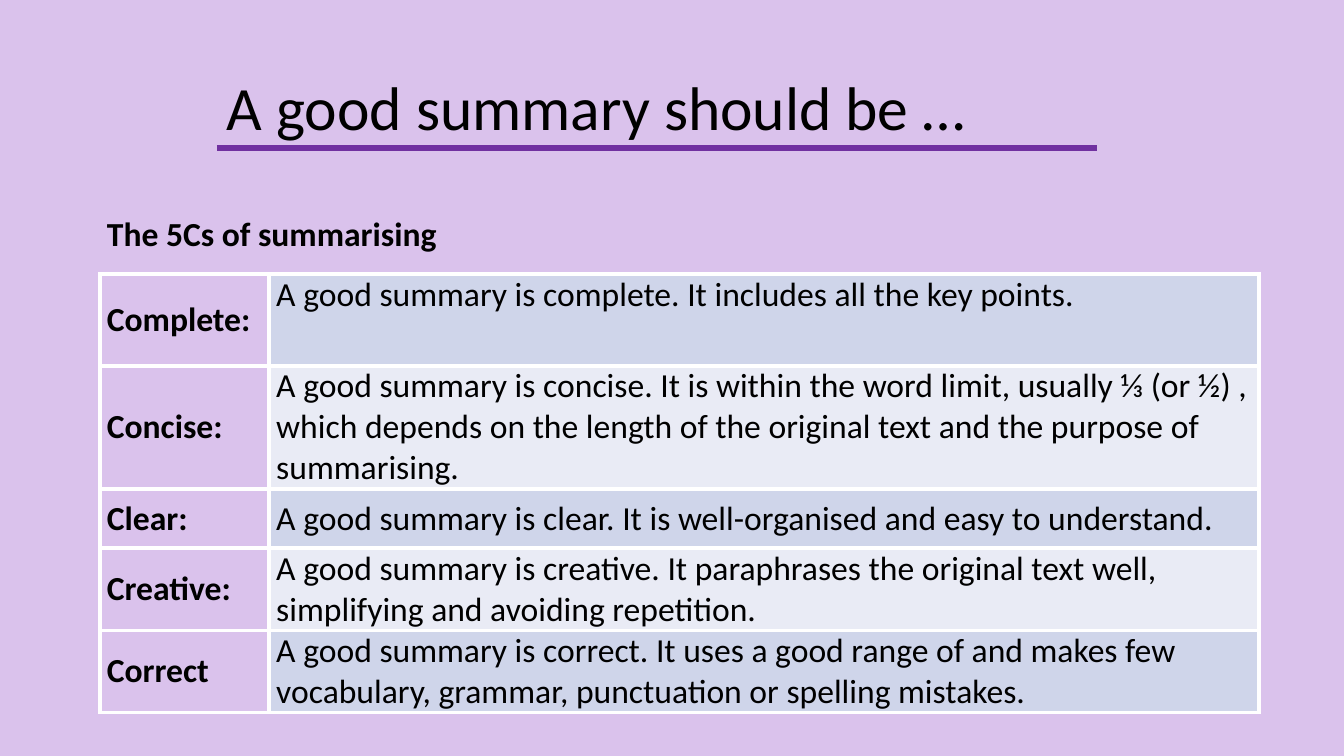
from typing import NamedTuple

from lxml.etree import SubElement
from pptx import Presentation
from pptx.dml.color import RGBColor
from pptx.enum.shapes import MSO_CONNECTOR
from pptx.enum.text import MSO_ANCHOR, MSO_AUTO_SIZE, PP_ALIGN
from pptx.oxml.ns import qn
from pptx.util import Inches, Pt

LILAC = RGBColor(0xDA, 0xC2, 0xEC)
PURPLE = RGBColor(0x70, 0x30, 0xA0)
BLACK = RGBColor(0x00, 0x00, 0x00)
WHITE = RGBColor(0xFF, 0xFF, 0xFF)
BAND_DARK = RGBColor(0xCF, 0xD5, 0xEA)
BAND_LIGHT = RGBColor(0xE9, 0xEB, 0xF5)
FONT = "Calibri"
HEADING_HEIGHT = 0.59
COLUMN_WIDTHS = (1.68, 9.82)


class Quality(NamedTuple):
    name: str
    description: str
    height: float
    anchor: MSO_ANCHOR = MSO_ANCHOR.TOP


QUALITIES = (
    Quality("Complete:", "A good summary is complete. It includes all the key points.", 0.91),
    Quality(
        "Concise:",
        "A good summary is concise. It is within the word limit, usually ⅓ (or ½) , "
        "which depends on the length of the original text and the purpose of summarising.",
        1.2,
    ),
    Quality(
        "Clear:",
        "A good summary is clear. It is well-organised and easy to understand.",
        0.59,
        MSO_ANCHOR.MIDDLE,
    ),
    Quality(
        "Creative:",
        "A good summary is creative. It paraphrases the original text well, "
        "simplifying and avoiding repetition.",
        0.8,
    ),
    Quality(
        "Correct",
        "A good summary is correct. It uses a good range of and makes few "
        "vocabulary, grammar, punctuation or spelling mistakes.",
        0.67,
    ),
)


def set_borders(cell, visible_sides: str) -> None:
    properties = cell._tc.get_or_add_tcPr()
    for side in "LRTB":
        line = SubElement(properties, qn(f"a:ln{side}"), w=str(Pt(3)))
        if side in visible_sides:
            fill = SubElement(line, qn("a:solidFill"))
            SubElement(fill, qn("a:srgbClr"), val=str(WHITE))
        else:
            SubElement(line, qn("a:noFill"))


def style_cell(cell, fill: RGBColor, visible_sides: str = "LRTB") -> None:
    set_borders(cell, visible_sides)
    cell.fill.solid()
    cell.fill.fore_color.rgb = fill
    cell.margin_left = cell.margin_right = Inches(0.07)
    cell.margin_top = cell.margin_bottom = 0


def write_cell(cell, text: str, bold: bool, anchor: MSO_ANCHOR) -> None:
    cell.vertical_anchor = anchor
    cell.text_frame.text = text
    paragraph = cell.text_frame.paragraphs[0]
    paragraph.space_after = Pt(6)
    font = paragraph.runs[0].font
    font.name, font.size, font.bold = FONT, Pt(24), bold
    font.color.rgb = BLACK


def add_title(slide) -> None:
    title = slide.shapes.title
    title.left, title.top = Inches(2.15), Inches(0.37)
    title.width, title.height = Inches(11.5), Inches(1.45)
    frame = title.text_frame
    frame.text = "A good summary should be …"
    frame.auto_size = MSO_AUTO_SIZE.NONE
    frame.vertical_anchor = MSO_ANCHOR.MIDDLE
    paragraph = frame.paragraphs[0]
    paragraph.alignment = PP_ALIGN.LEFT
    paragraph.line_spacing = 0.9
    font = paragraph.runs[0].font
    font.name, font.size = FONT, Pt(44)
    font.color.rgb = BLACK


def add_underline(slide) -> None:
    underline = slide.shapes.add_connector(
        MSO_CONNECTOR.STRAIGHT, Inches(2.15), Inches(1.47), Inches(10.88), Inches(1.47)
    )
    underline.line.color.rgb = PURPLE
    underline.line.width = Pt(4.5)
    SubElement(underline._element.spPr, qn("a:effectLst"))


def add_qualities_table(slide) -> None:
    heights = [HEADING_HEIGHT, *(quality.height for quality in QUALITIES)]
    table = slide.shapes.add_table(
        len(heights), len(COLUMN_WIDTHS), Inches(0.99), Inches(2.13),
        Inches(sum(COLUMN_WIDTHS)), Inches(sum(heights)),
    ).table
    table.first_row = table.horz_banding = False
    for column, width in zip(table.columns, COLUMN_WIDTHS):
        column.width = Inches(width)
    for row, height in zip(table.rows, heights):
        row.height = Inches(height)

    heading = table.cell(0, 0)
    heading.merge(table.cell(0, 1))
    for cell in table.rows[0].cells:
        style_cell(cell, LILAC, "B")
    write_cell(heading, "The 5Cs of summarising", True, MSO_ANCHOR.TOP)

    for index, quality in enumerate(QUALITIES):
        name, description = table.rows[index + 1].cells
        style_cell(name, LILAC)
        write_cell(name, quality.name, True, MSO_ANCHOR.MIDDLE)
        style_cell(description, BAND_LIGHT if index % 2 else BAND_DARK)
        write_cell(description, quality.description, False, quality.anchor)


def main() -> None:
    presentation = Presentation()
    presentation.slide_width, presentation.slide_height = Inches(13.33), Inches(7.5)
    slide = presentation.slides.add_slide(presentation.slide_layouts.get_by_name("Title Only"))
    slide.background.fill.solid()
    slide.background.fill.fore_color.rgb = LILAC
    add_underline(slide)
    add_title(slide)
    add_qualities_table(slide)
    presentation.save("out.pptx")


if __name__ == "__main__":
    main()
